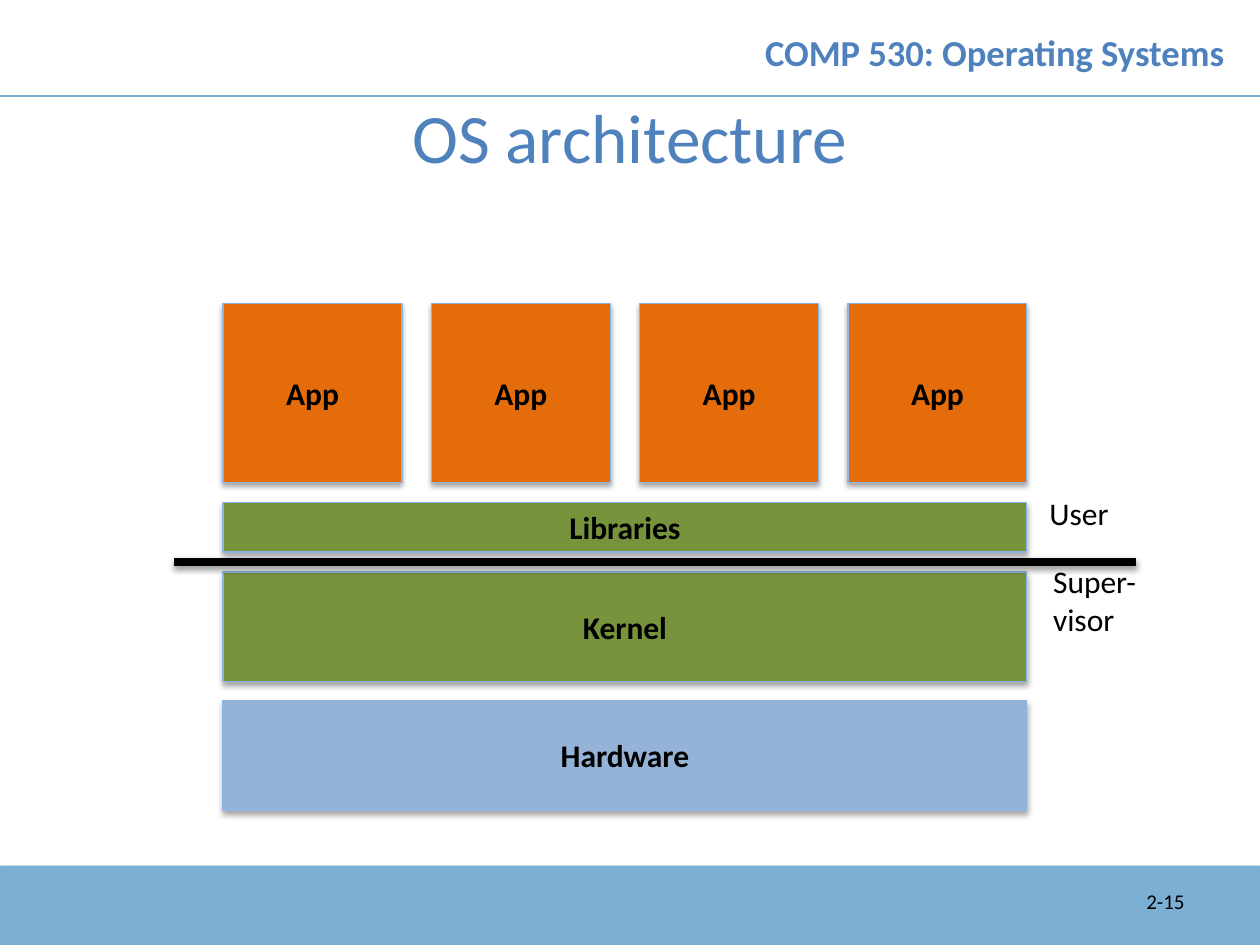
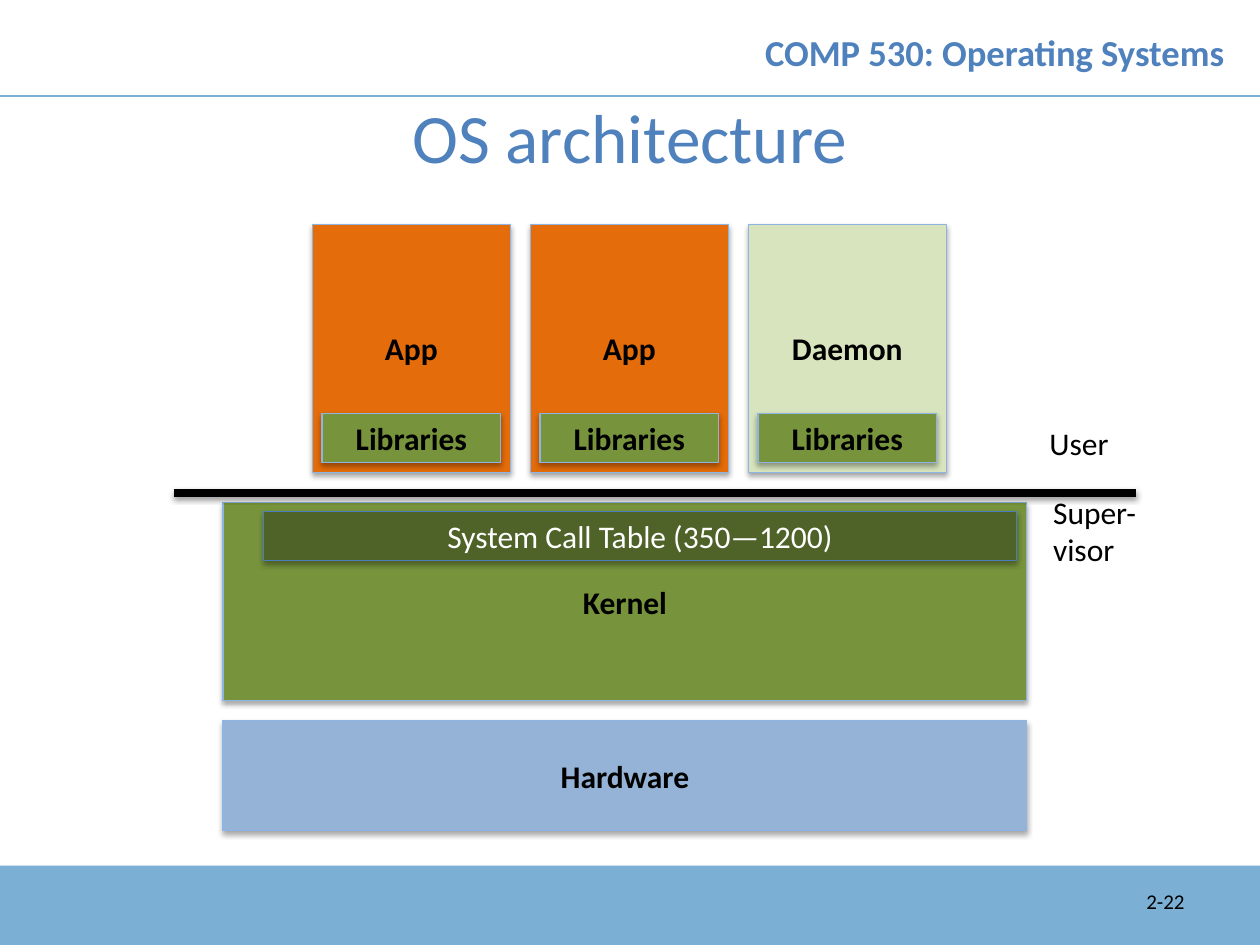
from dataclasses import dataclass

import pptx
import pptx.dml.color
import pptx.enum.shapes
import pptx.enum.text
import pptx.oxml
import pptx.oxml.ns
import pptx.util

Inches = pptx.util.Inches
Pt = pptx.util.Pt
Align = pptx.enum.text.PP_ALIGN
Anchor = pptx.enum.text.MSO_ANCHOR

FONT = "Calibri"
COLOURS = {
    "band": "7BAFD4",
    "heading": "4F81BD",
    "text": "000000",
    "light text": "FFFFFF",
    "app": "E46C0A",
    "daemon": "D7E4BD",
    "system": "77933C",
    "call table": "4F6228",
    "hardware": "95B3D7",
    "outline": "8EB4E3",
    "call outline": "4B7EBC",
}

SLIDE_WIDTH, SLIDE_HEIGHT = 10, 7.5
HEADER_HEIGHT = 0.76
BAND_TOP = 6.87
STACK_LEFT, STACK_WIDTH = 1.77, 6.38
LIBRARY_WIDTH, LIBRARY_HEIGHT = 1.42, 0.39
HARDWARE_HEIGHT = 0.87


@dataclass(frozen=True)
class Frame:
    left: float
    top: float
    width: float
    height: float

    def lengths(self) -> list:
        return [Inches(n) for n in (self.left, self.top, self.width, self.height)]


@dataclass(frozen=True)
class TextStyle:
    size: float = 18
    colour: str = "text"
    bold: bool = False
    align: Align = Align.CENTER
    anchor: Anchor = Anchor.MIDDLE
    line_spacing: float = 1.0
    wrap: bool = True


@dataclass(frozen=True)
class Block:
    text: str
    fill: str
    frame: Frame
    outline: str = "outline"
    style: TextStyle = TextStyle(bold=True)


COURSE_STYLE = TextStyle(20.9, "heading", bold=True, line_spacing=0.8)
TITLE_STYLE = TextStyle(39.6, "heading")
NUMBER_STYLE = TextStyle(12, align=Align.RIGHT)
LABEL_STYLE = TextStyle(align=Align.LEFT, anchor=Anchor.TOP, wrap=False)
CALL_STYLE = TextStyle(colour="light text")


def rgb(name: str) -> pptx.dml.color.RGBColor:
    return pptx.dml.color.RGBColor.from_string(COLOURS[name])


def set_shadow(shape, distance: float = 1.8, opacity: int = 35) -> None:
    """Give the shape a soft shadow below; with no opacity, none at all."""
    properties = shape._element.spPr
    for old in properties.findall(pptx.oxml.ns.qn("a:effectLst")):
        properties.remove(old)
    shadow = ""
    if opacity:
        shadow = (
            f'<a:outerShdw blurRad="{Pt(3.1)}" dist="{Pt(distance)}" dir="5400000" rotWithShape="0">'
            f'<a:srgbClr val="{COLOURS["text"]}"><a:alpha val="{opacity * 1000}"/></a:srgbClr>'
            "</a:outerShdw>"
        )
    namespace = pptx.oxml.ns.nsdecls("a")
    properties.append(pptx.oxml.parse_xml(f"<a:effectLst {namespace}>{shadow}</a:effectLst>"))


def write(shape, text: str, style: TextStyle) -> None:
    text_frame = shape.text_frame
    text_frame.word_wrap = style.wrap
    text_frame.vertical_anchor = style.anchor
    para = text_frame.paragraphs[0]
    para.alignment = style.align
    para.line_spacing = style.line_spacing
    for index, line in enumerate(text.split("\n")):
        if index:
            para.add_line_break()
        span = para.add_run()
        span.text = line
        span.font.name = FONT
        span.font.size = Pt(style.size)
        span.font.bold = style.bold
        span.font.color.rgb = rgb(style.colour)


def add_text(page, text: str, frame: Frame, style: TextStyle) -> None:
    write(page.shapes.add_textbox(*frame.lengths()), text, style)


def add_rectangle(page, frame: Frame, fill: str, outline: str = ""):
    box = page.shapes.add_shape(pptx.enum.shapes.MSO_SHAPE.RECTANGLE, *frame.lengths())
    box.fill.solid()
    box.fill.fore_color.rgb = rgb(fill)
    if outline:
        box.line.color.rgb = rgb(outline)
        box.line.width = Pt(0.75)
    else:
        box.line.fill.background()
    set_shadow(box)
    return box


def add_block(page, block: Block) -> None:
    box = add_rectangle(page, block.frame, block.fill, block.outline)
    write(box, block.text, block.style)


def add_rule(page, left: float, right: float, y: float, colour: str, width: float):
    rule = page.shapes.add_connector(
        pptx.enum.shapes.MSO_CONNECTOR.STRAIGHT,
        Inches(left), Inches(y), Inches(right), Inches(y),
    )
    rule.line.color.rgb = rgb(colour)
    rule.line.width = Pt(width)
    set_shadow(rule, opacity=0)
    return rule


def add_mode_boundary(page, y: float) -> None:
    """Draw the line between user and supervisor mode, with its labels."""
    boundary = add_rule(page, 1.38, 9.02, y, "text", 4.5)
    set_shadow(boundary, distance=1.6, opacity=38)
    add_text(page, "User", Frame(8.23, y - 0.59, 0.92, 0.5), LABEL_STYLE)
    add_text(page, "Super-\nvisor", Frame(8.26, y - 0.05, 1.23, 0.91), LABEL_STYLE)


def add_page(deck, title: str, number: str):
    page = deck.slides.add_slide(deck.slide_layouts[6])
    add_rectangle(page, Frame(0, BAND_TOP, SLIDE_WIDTH, SLIDE_HEIGHT - BAND_TOP), "band")
    add_rule(page, 0, SLIDE_WIDTH, HEADER_HEIGHT, "band", 1)
    add_text(page, "COMP 530: Operating Systems", Frame(5.79, 0.13, 4.21, 0.63), COURSE_STYLE)
    add_text(page, title, Frame(0, HEADER_HEIGHT, SLIDE_WIDTH, 0.63), TITLE_STYLE)
    add_text(page, number, Frame(7.17, 6.95, 2.33, 0.4), NUMBER_STYLE)
    return page


def layer(text: str, fill: str, top: float, height: float) -> Block:
    """A block as wide as the whole stack."""
    return Block(text, fill, Frame(STACK_LEFT, top, STACK_WIDTH, height))


def add_shared_libraries_page(deck) -> None:
    page = add_page(deck, "OS architecture", "2-15")
    app_count, app_side = 4, 1.42
    app_step = (STACK_WIDTH - app_side) / (app_count - 1)
    for index in range(app_count):
        frame = Frame(STACK_LEFT + index * app_step, 2.41, app_side, app_side)
        add_block(page, Block("App", "app", frame))
    add_block(page, layer("Libraries", "system", 3.99, LIBRARY_HEIGHT))
    add_block(page, layer("Kernel", "system", 4.54, 0.87))
    add_block(page, layer("Hardware", "hardware", 5.56, HARDWARE_HEIGHT))
    add_mode_boundary(page, 4.46)


def add_system_calls_page(deck) -> None:
    page = add_page(deck, "OS architecture", "2-22")
    process_width, process_step = 1.57, 1.73
    library_inset = (process_width - LIBRARY_WIDTH) / 2
    for index, (name, fill) in enumerate([("App", "app"), ("App", "app"), ("Daemon", "daemon")]):
        left = 2.48 + index * process_step
        add_block(page, Block(name, fill, Frame(left, 1.78, process_width, 1.97)))
        library = Frame(left + library_inset, 3.28, LIBRARY_WIDTH, LIBRARY_HEIGHT)
        add_block(page, Block("Libraries", "system", library))
    add_block(page, layer("Kernel", "system", 3.99, 1.57))
    call_table = Frame(2.09, 4.06, 5.98, LIBRARY_HEIGHT)
    add_block(page, Block("System Call Table (350—1200)", "call table", call_table,
                          "call outline", CALL_STYLE))
    add_block(page, layer("Hardware", "hardware", 5.72, HARDWARE_HEIGHT))
    add_mode_boundary(page, 3.91)


def main() -> None:
    deck = pptx.Presentation()
    deck.slide_width = Inches(SLIDE_WIDTH)
    deck.slide_height = Inches(SLIDE_HEIGHT)
    add_shared_libraries_page(deck)
    add_system_calls_page(deck)
    deck.save("out.pptx")


if __name__ == "__main__":
    main()
